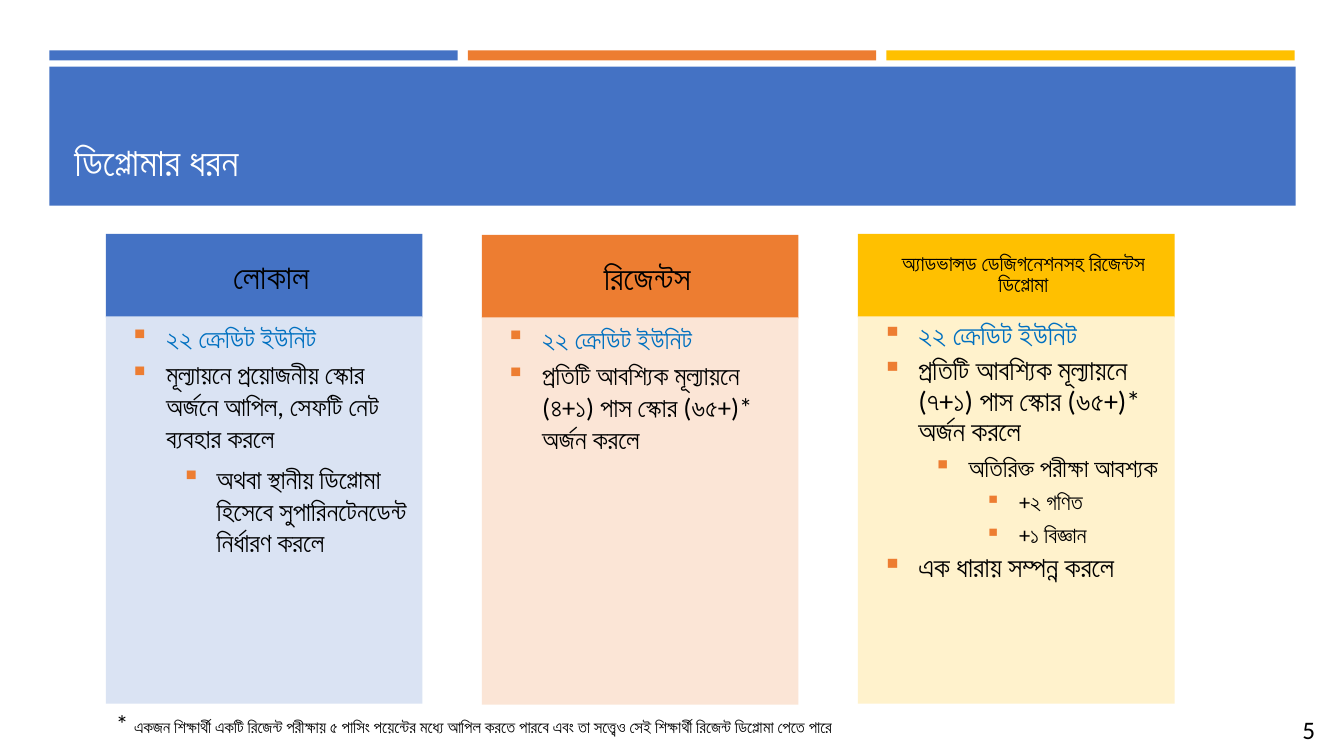
import pptx
import pptx.util
import pptx.dml.color
import pptx.enum.shapes
import pptx.enum.text
from lxml import etree

Inches, Pt = pptx.util.Inches, pptx.util.Pt
ALIGN, ANCHOR = pptx.enum.text.PP_ALIGN, pptx.enum.text.MSO_ANCHOR
BLUE, ORANGE, GOLD = "4472C4", "ED7D31", "FFC000"
BLACK, WHITE, LINK = "000000", "FFFFFF", "0070C0"
NS = "http://schemas.openxmlformats.org/drawingml/2006/main"

prs = pptx.Presentation()
prs.slide_width, prs.slide_height = Inches(13.33), Inches(7.5)
s = prs.slides.add_slide(prs.slide_layouts[6])


def add_box(left, top, width, height, fill=None, anchor=ANCHOR.TOP):
    """Add a filled rectangle, or a plain text box when there is no fill."""
    at = [Inches(v) for v in (left, top, width, height)]
    if fill:
        sp = s.shapes.add_shape(pptx.enum.shapes.MSO_SHAPE.RECTANGLE, *at)
        sp.shadow.inherit = False
        sp.fill.solid()
        sp.fill.fore_color.rgb = pptx.dml.color.RGBColor.from_string(fill)
        sp.line.fill.background()
    else:
        sp = s.shapes.add_textbox(*at)
    sp.text_frame.word_wrap = True
    sp.text_frame.vertical_anchor = anchor
    return sp.text_frame


def add_run(p, text, size, color):
    r = p.add_run()
    r.text = text
    formats = {"size": Pt(size), "name": "Calibri"}
    for name, value in formats.items():
        setattr(r.font, name, value)
    r.font.color.rgb = pptx.dml.color.RGBColor.from_string(color)
    # Bengali takes its typeface from the complex script font
    etree.SubElement(r.font._element, f"{{{NS}}}cs", typeface="Calibri")


# Top stripes and title band
for i, color in enumerate((BLUE, ORANGE, GOLD)):
    add_box(0.49 + 4.15 * i, 0.5, 4.05, 0.1, color)
add_box(0.49, 0.66, 12.36, 1.38, BLUE)
tf = add_box(0.64, 0.8, 12.06, 1.08, anchor=ANCHOR.BOTTOM)
add_run(tf.paragraphs[0], "ডিপ্লোমার ধরন", 28, WHITE)

# Diploma columns: top, header, header size, header spacing, header fill,
# body fill, body spacing, then (level, size, colour, text) for each bullet
columns = [
    (2.32, "লোকাল", 24, 1, BLUE, "DAE3F3", 1, [
        (0, 19, LINK, "২২ ক্রেডিট ইউনিট"),
        (0, 19, BLACK, "মূল্যায়নে প্রয়োজনীয় স্কোর অর্জনে আপিল, সেফটি নেট ব্যবহার করলে"),
        (1, 19, BLACK, "অথবা স্থানীয় ডিপ্লোমা হিসেবে সুপারিনটেনডেন্ট নির্ধারণ করলে"),
    ]),
    (2.33, "রিজেন্টস", 24, 1, ORANGE, "FBE5D6", 1, [
        (0, 19, LINK, "২২ ক্রেডিট ইউনিট"),
        (0, 19, BLACK, "প্রতিটি আবশ্যিক মূল্যায়নে (৪+১) পাস স্কোর (৬৫+)* অর্জন করলে"),
    ]),
    (2.32, "অ্যাডভান্সড ডেজিগনেশনসহ রিজেন্টস ডিপ্লোমা", 15.5, 0.8, GOLD, "FFF2CC", 0.9, [
        (0, 20, LINK, "২২ ক্রেডিট ইউনিট"),
        (0, 20, BLACK, "প্রতিটি আবশ্যিক মূল্যায়নে (৭+১) পাস স্কোর (৬৫+)* অর্জন করলে"),
        (1, 18, BLACK, "অতিরিক্ত পরীক্ষা আবশ্যক"),
        (2, 16, BLACK, "+২ গণিত"),
        (2, 16, BLACK, "+১ বিজ্ঞান"),
        (0, 20, BLACK, "এক ধারায় সম্পন্ন করলে"),
    ]),
]
hanging = (0.36, 0.35, 0.34)
for i, (top, header, size, header_spacing, fill, tint, spacing, bullets) in enumerate(columns):
    left = 1.05 + 3.73 * i
    p = add_box(left, top, 3.14, 0.83, fill, ANCHOR.MIDDLE).paragraphs[0]
    p.alignment, p.line_spacing = ALIGN.CENTER, header_spacing
    p._p.get_or_add_pPr().set("marL", str(Inches(0.14)))
    add_run(p, header, size, BLACK)

    tf = add_box(left, top + 0.82, 3.14, 3.84, tint)
    for n, (level, size, color, text) in enumerate(bullets):
        p = tf.add_paragraph() if n else tf.paragraphs[0]
        p.level, p.alignment, p.line_spacing = level, ALIGN.LEFT, spacing
        p.space_before = Pt(0 if n == 0 else 6 if level else 3.6)
        pPr = p._p.get_or_add_pPr()
        pPr.set("marL", str(Inches(0.5 + 0.5 * level)))
        pPr.set("indent", str(-Inches(hanging[level])))
        bullet_color = etree.SubElement(pPr, f"{{{NS}}}buClr")
        etree.SubElement(bullet_color, f"{{{NS}}}srgbClr", val=ORANGE)
        etree.SubElement(pPr, f"{{{NS}}}buChar", char="▪")
        add_run(p, text, size, color)

# Footnote and slide number
p = add_box(1.05, 6.98, 10.02, 0.4).paragraphs[0]
add_run(p, "* ", 18, BLACK)
add_run(p, "একজন শিক্ষার্থী একটি রিজেন্ট পরীক্ষায় ৫ পাসিং পয়েন্টের মধ্যে আপিল করতে পারবে "
           "এবং তা সত্ত্বেও সেই শিক্ষার্থী রিজেন্ট ডিপ্লোমা পেতে পারে", 12, BLACK)
p = add_box(12.63, 7.04, 0.7, 0.4).paragraphs[0]
p.alignment = ALIGN.CENTER
add_run(p, "5", 18, BLACK)

prs.save("out.pptx")
